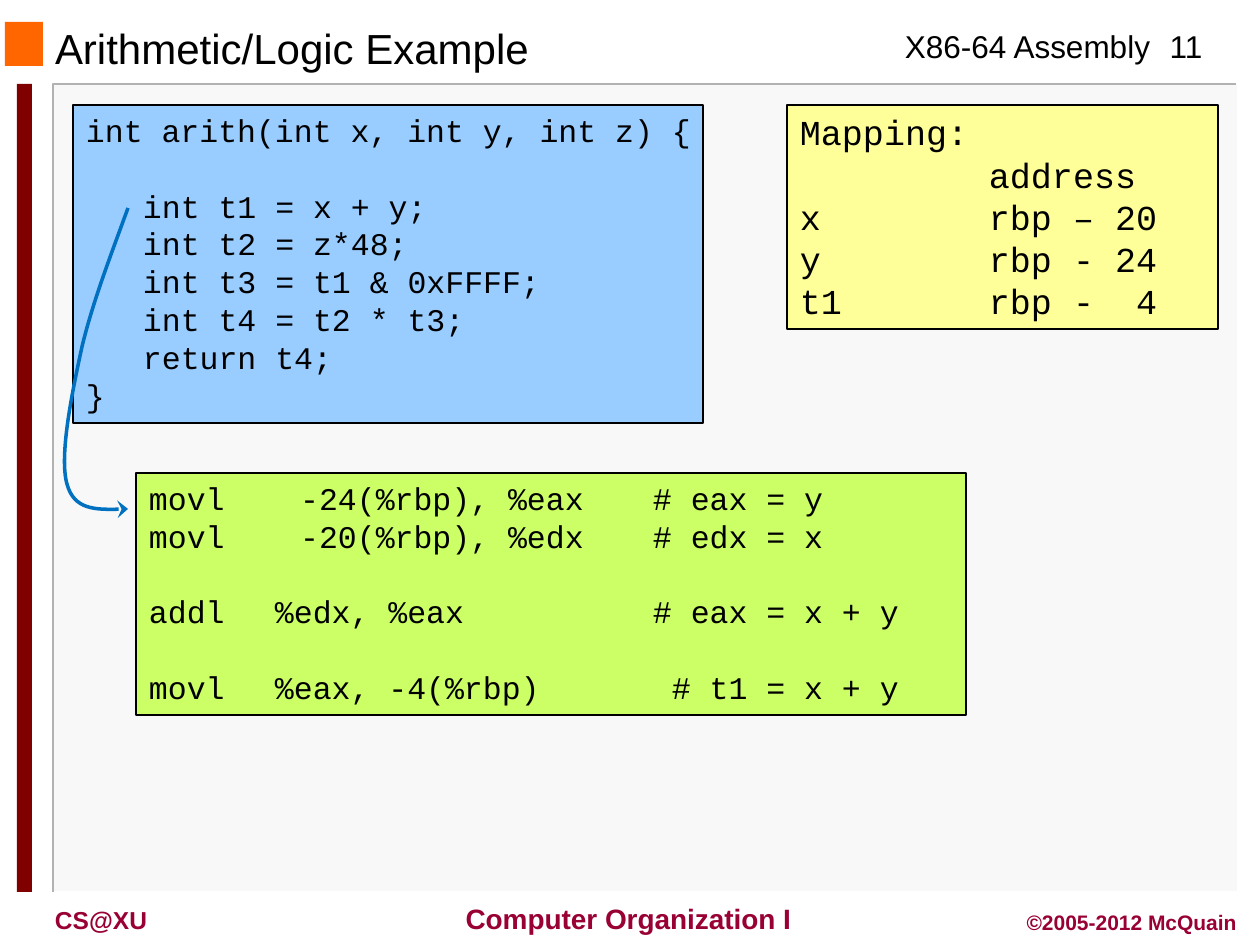
from pptx import Presentation
from pptx.dml.color import RGBColor
from pptx.enum.shapes import MSO_SHAPE
from pptx.enum.text import MSO_ANCHOR, MSO_AUTO_SIZE, PP_ALIGN
from pptx.oxml.ns import qn
from pptx.util import Pt
from lxml import etree

RECT = MSO_SHAPE.RECTANGLE
LEFT, CENTER, RIGHT = PP_ALIGN.LEFT, PP_ALIGN.CENTER, PP_ALIGN.RIGHT
TOP, MIDDLE = MSO_ANCHOR.TOP, MSO_ANCHOR.MIDDLE
EMU_PER_PX = 914400 / 126

THEME = {
    "sans": "Arial", "mono": "Courier New",
    "ink": "000000", "panel": "F8F8F8", "rule": "B2B2B2",
    "accent": "FF6600", "bar": "800000", "footer": "990033",
    "source": "99CCFF", "mapping": "FFFF99", "assembly": "CCFF66", "flow": "0070C0",
    "title": 24, "header": 18, "code": 18, "map": 20,
    "course": 16, "school": 14, "credit": 12,
}

# Content: places are (left, top, width, height) in px
TITLE = ("Arithmetic/Logic Example", (42, 24, 798, 48))
BLOCKS = [("panel", (54, 84, 1183, 807)), ("accent", (5, 22, 38, 44)),
          ("bar", (17, 84, 15, 808))]
PANEL_RULE = [(1236, 84), (53, 84), (53, 892)]
# text, place, size, colour, bold, alignment, anchor
LABELS = [
    ("X86-64 Assembly", (892, 21, 290, 51), "header", "ink", False, LEFT, TOP),
    ("11", (1144, 21, 84, 51), "header", "ink", False, CENTER, TOP),
    ("CS@XU", (42, 899, 189, 42), "school", "footer", True, LEFT, TOP),
    ("Computer Organization I", (445, 895, 367, 47), "course", "footer", True, CENTER, MIDDLE),
    ("©2005-2012 McQuain", (988, 904, 262, 38), "credit", "footer", True, RIGHT, TOP),
]
# Code lines are (text, format); indent and tab distance in px, gap in lines
BODY = {"indent": 57}
MAP_TAB = {"tab": 189}
LOAD_TAB = {"tab": 50.4}
RESULT_TAB = {"tab": 126, "gap": 1}
CODE_BOXES = [
    ("source", "code", (73, 105, 630, 318), [
        ("int arith(int x, int y, int z) {", {}),
        ("int t1 = x + y;", {**BODY, "gap": 1}),
        ("int t2 = z*48;", BODY),
        ("int t3 = t1 & 0xFFFF;", BODY),
        ("int t4 = t2 * t3;", BODY),
        ("return t4;", BODY),
        ("}", {}),
    ]),
    ("mapping", "map", (787, 105, 431, 224), [
        ("Mapping:", {}),
        ("\taddress", MAP_TAB),
        ("x\trbp – 20", MAP_TAB),
        ("y\trbp - 24", MAP_TAB),
        ("t1\trbp -  4", MAP_TAB),
    ]),
    ("assembly", "code", (136, 473, 830, 242), [
        ("movl\t\t-24(%rbp), %eax\t\t# eax = y", LOAD_TAB),
        ("movl\t\t-20(%rbp), %edx\t\t# edx = x", LOAD_TAB),
        ("addl\t%edx, %eax\t\t# eax = x + y", RESULT_TAB),
        ("movl\t%eax, -4(%rbp)\t # t1 = x + y", RESULT_TAB),
    ]),
]
FLOW_START = (128, 208)
# Each curve: first control, second control, end
FLOW_CURVES = [((111, 255), (93, 301), (82, 347)),
               ((72, 393), (59, 456), (67, 484)),
               ((74, 510), (102, 510), (128, 509))]


def px(value):
    return round(value * EMU_PER_PX)


def color(key):
    return RGBColor.from_string(THEME[key])


def set_text(holder, lines, *, size, font="sans", ink="ink", bold=False,
             align=LEFT, anchor=TOP, right_inset=13, pitch=None):
    """Write (text, format) lines; pitch is line height as a share of type size."""
    frame = holder.text_frame
    frame.word_wrap, frame.auto_size = True, MSO_AUTO_SIZE.NONE
    frame.vertical_anchor = anchor
    frame.margin_left, frame.margin_right = px(13), px(right_inset)
    frame.margin_top = frame.margin_bottom = px(6)
    for number, (text, layout) in enumerate(lines):
        line = frame.add_paragraph() if number else frame.paragraphs[0]
        line.alignment = align
        if pitch:
            line.line_spacing = Pt(THEME[size] * pitch)
            line.space_before = Pt(THEME[size] * pitch * layout.get("gap", 0))
        run = line.add_run()
        run.text = text
        run.font.name, run.font.size = THEME[font], Pt(THEME[size])
        run.font.bold, run.font.color.rgb = bold, color(ink)
        properties = line._p.get_or_add_pPr()
        properties.set("marL", str(px(layout.get("indent", 0))))
        properties.set("indent", "0")
        if "tab" in layout:
            properties.set("defTabSz", str(px(layout["tab"])))


def add_block(slide, place, fill, line=None):
    block = slide.shapes.add_shape(RECT, *map(px, place))
    block.shadow.inherit = False
    block.fill.solid()
    block.fill.fore_color.rgb = color(fill)
    if line:
        block.line.color.rgb, block.line.width = color(line), Pt(0.75)
    else:
        block.line.fill.background()
    return block


def add_outline(slide, points, line, width):
    start, *rest = [(px(x), px(y)) for x, y in points]
    builder = slide.shapes.build_freeform(*start)
    builder.add_line_segments(rest, close=False)
    outline = builder.convert_to_shape()
    outline.shadow.inherit = False
    outline.fill.background()
    outline.line.color.rgb, outline.line.width = color(line), Pt(width)
    return outline


def add_flow_arrow(slide):
    ends = [end for _, _, end in FLOW_CURVES]
    arrow = add_outline(slide, [FLOW_START, *ends], "flow", 2)
    # Turn each straight segment into a cubic curve
    segments = list(arrow._element.iter(qn("a:lnTo")))
    for segment, (*controls, _) in zip(segments, FLOW_CURVES):
        curve = etree.Element(qn("a:cubicBezTo"))
        for x, y in controls:
            etree.SubElement(curve, qn("a:pt"), x=str(px(x) - arrow.left),
                             y=str(px(y) - arrow.top))
        curve.append(segment[0])
        segment.getparent().replace(segment, curve)
    etree.SubElement(arrow.line._get_or_add_ln(), qn("a:tailEnd"),
                     type="stealth", w="lg", len="med")


def main():
    deck = Presentation()
    deck.slide_width, deck.slide_height = px(1260), px(945)
    slide = deck.slides.add_slide(deck.slide_layouts[5])

    # Frame
    for fill, place in BLOCKS:
        add_block(slide, place, fill)
    add_outline(slide, PANEL_RULE, "rule", 1)

    # Title, header and footer
    title, place = TITLE
    heading = slide.shapes.title
    heading.left, heading.top, heading.width, heading.height = map(px, place)
    set_text(heading, [(title, {})], size="title", anchor=MIDDLE)
    for text, place, size, ink, bold, align, anchor in LABELS:
        label = slide.shapes.add_textbox(*map(px, place))
        set_text(label, [(text, {})], size=size, ink=ink, bold=bold,
                 align=align, anchor=anchor)

    # Code boxes and the arrow from source to assembly
    for fill, size, place, lines in CODE_BOXES:
        box = add_block(slide, place, fill, line="ink")
        set_text(box, lines, size=size, font="mono", right_inset=0, pitch=1.2)
    add_flow_arrow(slide)

    deck.save("out.pptx")


if __name__ == "__main__":
    main()
